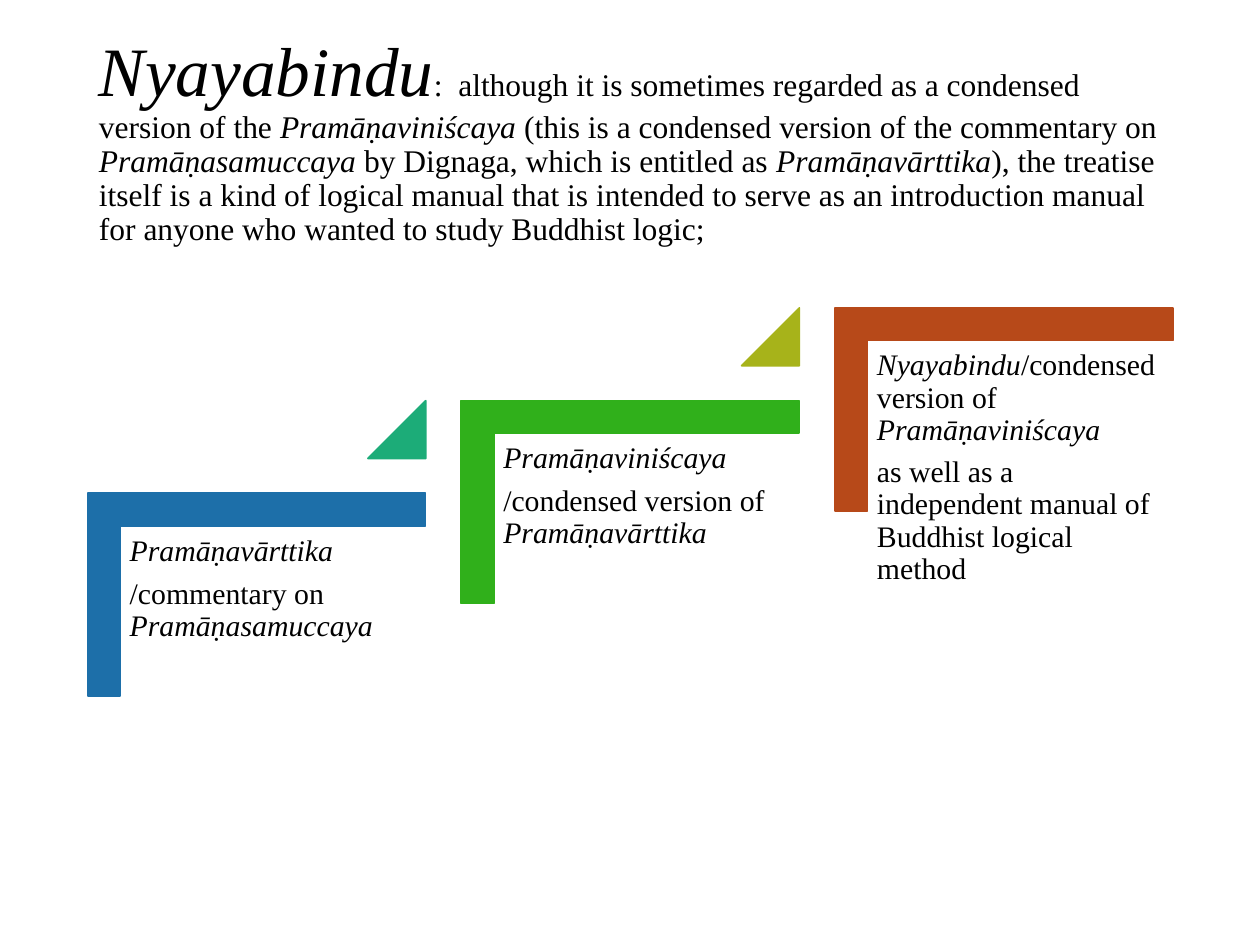
from pptx import Presentation
from pptx.dml.color import RGBColor
from pptx.enum.shapes import MSO_SHAPE
from pptx.enum.text import MSO_ANCHOR, PP_ALIGN
from pptx.util import Pt

COLOURS = {
    "text": "000000",
    "blue": "1D6FA9",
    "teal": "1CAC78",
    "green": "30B01B",
    "olive": "A7B31A",
    "rust": "B74919",
}
TITLE = [
    ("*Nyayabindu*", 39.6),
    (":  although it is sometimes regarded as a condensed version of the "
     "*Pramāṇaviniścaya* (this is a condensed version of the commentary on "
     "*Pramāṇasamuccaya* by Dignaga, which is entitled as *Pramāṇavārttika*), "
     "the treatise itself is a kind of logical manual that is intended to serve "
     "as an introduction manual for anyone who wanted to study Buddhist logic;", 18),
]
STEPS = [
    ("blue", "teal", ["*Pramāṇavārttika*", "/commentary on *Pramāṇasamuccaya*"]),
    ("green", "olive", ["*Pramāṇaviniścaya*", "/condensed version of *Pramāṇavārttika*"]),
    ("rust", None, ["*Nyayabindu*/condensed version of *Pramāṇaviniścaya*",
                    "as well as a independent manual of Buddhist logical method"]),
]
STEP_RIGHT, STEP_UP = 213.5, 53


class StaircaseSlide:
    """Style and drawing methods for the slide; *asterisks* mark italics."""

    font = "Times New Roman"

    def __init__(self, slide):
        self.slide = slide

    def shape(self, kind, box, colour, adjustments, rotation=0):
        shape = self.slide.shapes.add_shape(kind, *map(Pt, box))
        shape.shadow.inherit = False
        shape.rotation = rotation
        for index, value in enumerate(adjustments):
            shape.adjustments[index] = value
        rgb = RGBColor.from_string(COLOURS[colour])
        shape.fill.solid()
        shape.fill.fore_color.rgb = rgb
        shape.line.color.rgb = rgb
        shape.line.width = Pt(1)

    def text(self, box, paragraphs, margins, anchor=MSO_ANCHOR.TOP, space_after=0):
        frame = self.slide.shapes.add_textbox(*map(Pt, box)).text_frame
        frame.word_wrap = True
        frame.vertical_anchor = anchor
        frame.margin_left = frame.margin_right = Pt(margins[0])
        frame.margin_top = frame.margin_bottom = Pt(margins[1])
        for index, pieces in enumerate(paragraphs):
            paragraph = frame.add_paragraph() if index else frame.paragraphs[0]
            paragraph.alignment = PP_ALIGN.LEFT
            paragraph.line_spacing = 0.9
            paragraph.space_after = Pt(space_after)
            for words, size in pieces:
                self.runs(paragraph, words, size)

    def runs(self, paragraph, words, size):
        for index, part in enumerate(words.split("*")):
            if part:
                run = paragraph.add_run()
                run.text = part
                run.font.name = self.font
                run.font.size = Pt(size)
                run.font.italic = index % 2 == 1
                run.font.color.rgb = RGBColor.from_string(COLOURS["text"])

    def step(self, index, corner_colour, triangle_colour, lines):
        x, y = index * STEP_RIGHT, -index * STEP_UP
        self.shape(MSO_SHAPE.CORNER, (88.6 + x, 243.4 + y, 116, 193),
                   corner_colour, (0.161, 0.161), 90)
        self.text((69 + x, 301 + y, 174.3, 152.6), [[(line, 17)] for line in lines],
                  (5.1, 5.1), space_after=6)
        if triangle_colour:
            self.shape(MSO_SHAPE.ISOSCELES_TRIANGLE, (210.3 + x, 229 + y, 33, 33),
                       triangle_colour, (1,))


def main():
    presentation = Presentation()
    presentation.slide_width, presentation.slide_height = Pt(720), Pt(540)
    slide = presentation.slides.add_slide(presentation.slide_layouts[6])
    staircase = StaircaseSlide(slide)
    staircase.text((49.5, 28.8, 621, 104.4), [TITLE], (7.2, 3.6), MSO_ANCHOR.MIDDLE)
    for index, step in enumerate(STEPS):
        staircase.step(index, *step)
    presentation.save("out.pptx")


if __name__ == "__main__":
    main()
